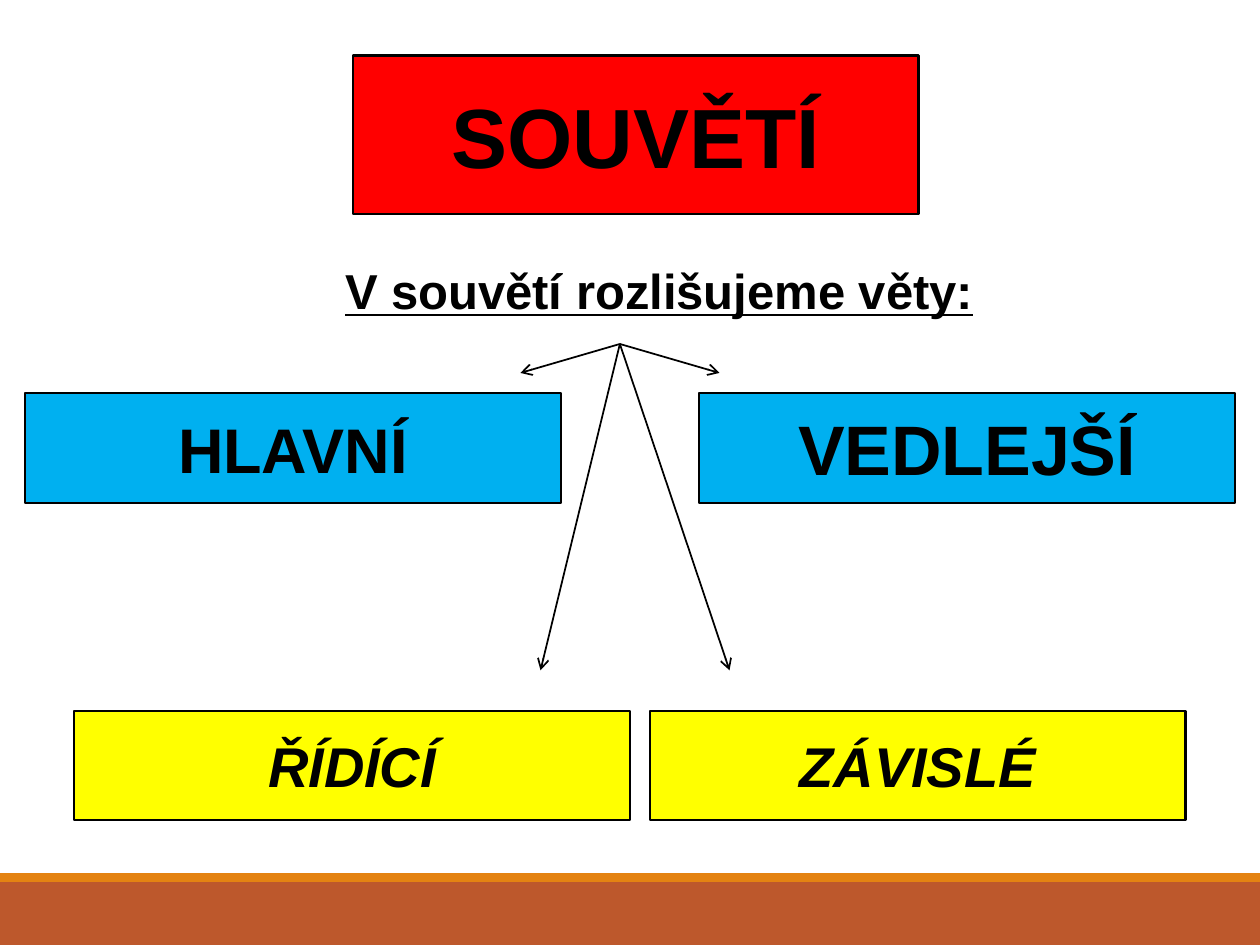
"""Builds a slide that sorts the clauses of a Czech compound sentence."""
from lxml.etree import SubElement
from pptx import Presentation
from pptx.dml.color import RGBColor
from pptx.enum.shapes import MSO_CONNECTOR, MSO_SHAPE
from pptx.enum.text import MSO_ANCHOR, MSO_AUTO_SIZE, PP_ALIGN
from pptx.oxml.ns import qn
from pptx.util import Inches, Pt

COLUMNS, ROWS = 100, 75
CELL = Inches(0.1)
COLORS = {
    "title": "FF0000",
    "clause": "00B0F0",
    "role": "FFFF00",
    "ink": "000000",
    "band": "BD582C",
    "stripe": "E48312",
}


def grid(*cells):
    return [round(cell * CELL) for cell in cells]


def color(name):
    return RGBColor.from_string(COLORS[name])


def write(shape, text, size, underline=None, italic=None):
    shape.text_frame.text = text
    paragraph = shape.text_frame.paragraphs[0]
    font = paragraph.font
    font.name, font.size, font.bold = "Arial", Pt(size), True
    font.underline, font.italic = underline, italic
    font.color.rgb = color("ink")
    return paragraph


def style_box(shape, fill, text, size, italic=None):
    shape.fill.solid()
    shape.fill.fore_color.rgb = color(fill)
    shape.line.color.rgb = color("ink")
    shape.line.width = Pt(1.25)
    frame = shape.text_frame
    frame.auto_size = MSO_AUTO_SIZE.NONE
    frame.vertical_anchor = MSO_ANCHOR.MIDDLE
    write(shape, text, size, italic=italic).alignment = PP_ALIGN.CENTER


def add_band(slide, fill, top, height):
    shape = slide.shapes.add_shape(MSO_SHAPE.RECTANGLE, *grid(0, top, COLUMNS, height))
    shape.shadow.inherit = False
    shape.fill.solid()
    shape.fill.fore_color.rgb = color(fill)
    shape.line.fill.background()


def add_title(slide, text):
    title = slide.shapes.title
    title.left, title.top, title.width, title.height = grid(28, 4.4, 44.9, 12.6)
    geometry = SubElement(title._element.spPr, qn("a:prstGeom"), prst="roundRect")
    SubElement(geometry, qn("a:avLst"))
    style_box(title, "title", text, 48)


def add_heading(slide, text):
    heading = slide.shapes.add_textbox(*grid(26.4, 20.2, 52.5, 5.3))
    heading.text_frame.word_wrap = False
    write(heading, text, 28, underline=True)


def add_box(slide, fill, left, top, width, text, size, italic=None):
    shape = slide.shapes.add_shape(MSO_SHAPE.RECTANGLE, *grid(left, top, width, 8.7))
    shape.shadow.inherit = False
    style_box(shape, fill, text, size, italic)


def add_arrow(slide, start, end):
    arrow = slide.shapes.add_connector(MSO_CONNECTOR.STRAIGHT, *grid(*start, *end))
    arrow.line.color.rgb = color("ink")
    arrow.line.width = Pt(1)
    SubElement(arrow.line._get_or_add_ln(), qn("a:tailEnd"), type="arrow")
    SubElement(arrow._element.spPr, qn("a:effectLst"))


def main():
    presentation = Presentation()
    presentation.slide_width, presentation.slide_height = grid(COLUMNS, ROWS)
    slide = presentation.slides.add_slide(presentation.slide_layouts.get_by_name("Title Only"))

    add_band(slide, "band", 70, 5)
    add_band(slide, "stripe", 69.3, 0.7)
    add_title(slide, "SOUVĚTÍ")
    add_heading(slide, "V souvětí rozlišujeme věty:")

    clause_row, role_row = 31.2, 56.4
    add_box(slide, "clause", 2, clause_row, 42.5, "HLAVNÍ", 36)
    add_box(slide, "clause", 55.5, clause_row, 42.5, "VEDLEJŠÍ", 40)
    add_box(slide, "role", 5.9, role_row, 44.1, "ŘÍDÍCÍ", 32, italic=True)
    add_box(slide, "role", 51.6, role_row, 42.5, "ZÁVISLÉ", 32, italic=True)

    for end in ((41.3, 29.6), (57.1, 29.6), (57.9, 53.2), (42.9, 53.2)):
        add_arrow(slide, (49.2, 27.3), end)

    presentation.save("out.pptx")


if __name__ == "__main__":
    main()
